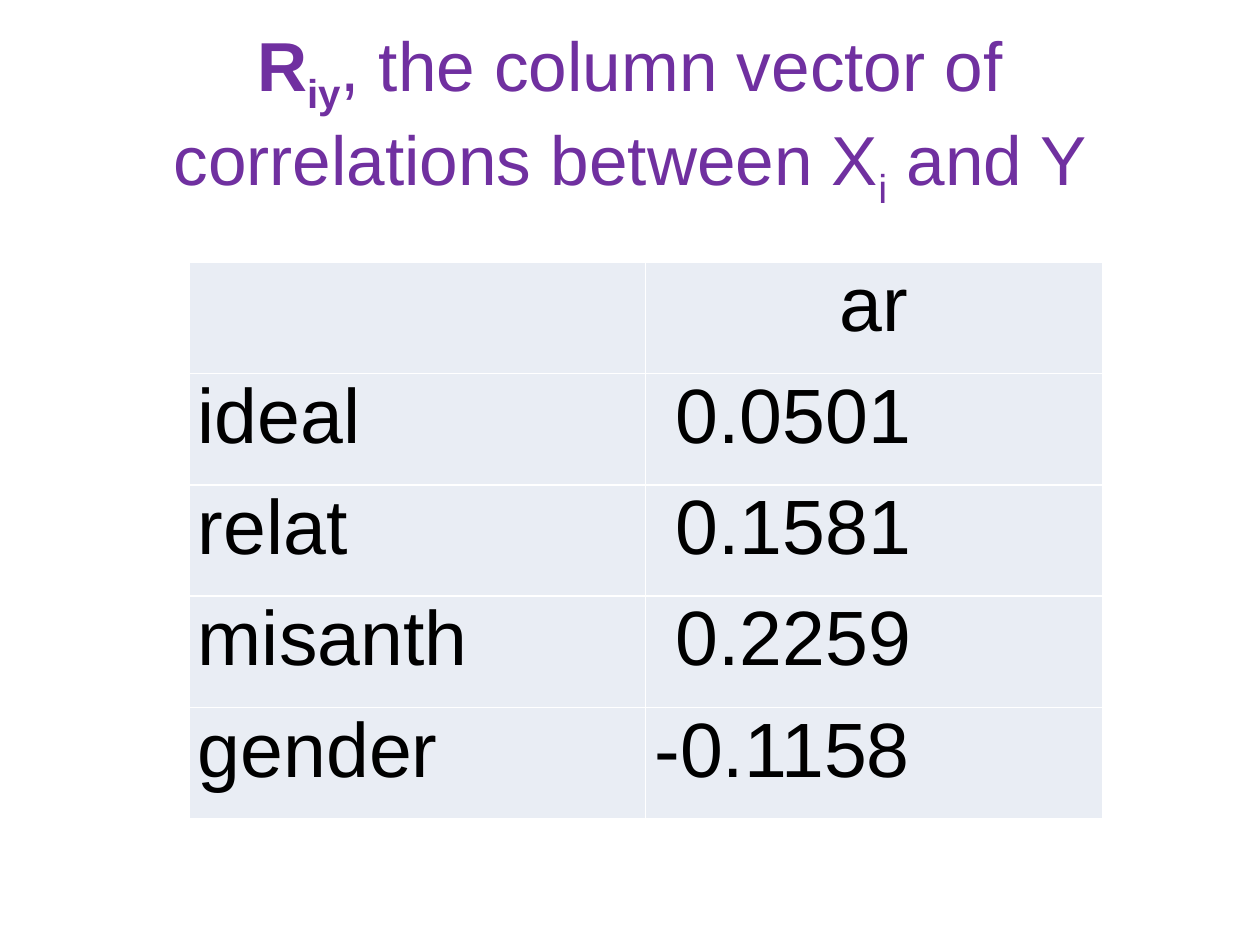
from dataclasses import dataclass

from lxml.etree import SubElement
from pptx import Presentation
from pptx.dml.color import RGBColor as Color
from pptx.enum.text import MSO_ANCHOR as Anchor, MSO_AUTO_SIZE as AutoSize, PP_ALIGN as Align
from pptx.oxml.ns import qn
from pptx.util import Inches, Pt


@dataclass(frozen=True)
class Theme:
    font: str = "Arial"
    title_color: str = "7030A0"
    text_color: str = "000000"
    cell_fill: str = "E9EDF4"
    border: str = "FFFFFF"
    title_size: float = 39.6
    cell_size: float = 44
    border_width: float = 1


THEME = Theme()
TITLE_RUNS = [
    ("R", True, False),
    ("iy", True, True),
    (", the column vector of correlations between X", False, False),
    ("i", False, True),
    (" and Y", False, False),
]
CORRELATIONS = [
    ("", "ar"),
    ("ideal", " 0.0501"),
    ("relat", " 0.1581"),
    ("misanth", " 0.2259"),
    ("gender", "-0.1158"),
]
TITLE_BOX = (0.5, 0.3, 9, 1.25)
TABLE_BOX = (1.5, 2.08, 7.25, 4.42)


def add_run(para, text, size, color, bold=False, subscript=False):
    run = para.add_run()
    run.text = text
    run.font.name = THEME.font
    run.font.size = Pt(size)
    run.font.bold = bold
    run.font.color.rgb = Color.from_string(color)
    if subscript:
        run.font._element.set("baseline", "-25000")


def add_borders(cell):
    properties = cell._tc.get_or_add_tcPr()
    for position, side in enumerate(("lnL", "lnR", "lnT", "lnB")):
        line = SubElement(properties, qn(f"a:{side}"), w=str(Pt(THEME.border_width)))
        fill = SubElement(line, qn("a:solidFill"))
        SubElement(fill, qn("a:srgbClr"), val=THEME.border)
        properties.insert(position, line)


def add_title(page):
    title = page.shapes.title
    title.left, title.top, title.width, title.height = map(Inches, TITLE_BOX)
    frame = title.text_frame
    frame.word_wrap = True
    frame.auto_size = AutoSize.NONE
    frame.vertical_anchor = Anchor.MIDDLE
    para = frame.paragraphs[0]
    para.alignment = Align.CENTER
    for text, bold, subscript in TITLE_RUNS:
        add_run(para, text, THEME.title_size, THEME.title_color, bold, subscript)


def add_correlations(page):
    table = page.shapes.add_table(
        len(CORRELATIONS), len(CORRELATIONS[0]), *map(Inches, TABLE_BOX)
    ).table
    table.first_row = False
    table.horz_banding = False
    for row_index, values in enumerate(CORRELATIONS):
        for column_index, text in enumerate(values):
            cell = table.cell(row_index, column_index)
            cell.margin_left = cell.margin_right = Inches(0.07)
            cell.margin_top = cell.margin_bottom = 0
            cell.fill.solid()
            cell.fill.fore_color.rgb = Color.from_string(THEME.cell_fill)
            add_borders(cell)
            para = cell.text_frame.paragraphs[0]
            para.alignment = Align.LEFT if row_index else Align.CENTER
            if text:
                add_run(para, text, THEME.cell_size, THEME.text_color)


def main():
    deck = Presentation()
    deck.slide_width, deck.slide_height = Inches(10), Inches(7.5)
    page = deck.slides.add_slide(deck.slide_layouts.get_by_name("Title Only"))
    add_title(page)
    add_correlations(page)
    deck.save("out.pptx")


if __name__ == "__main__":
    main()
